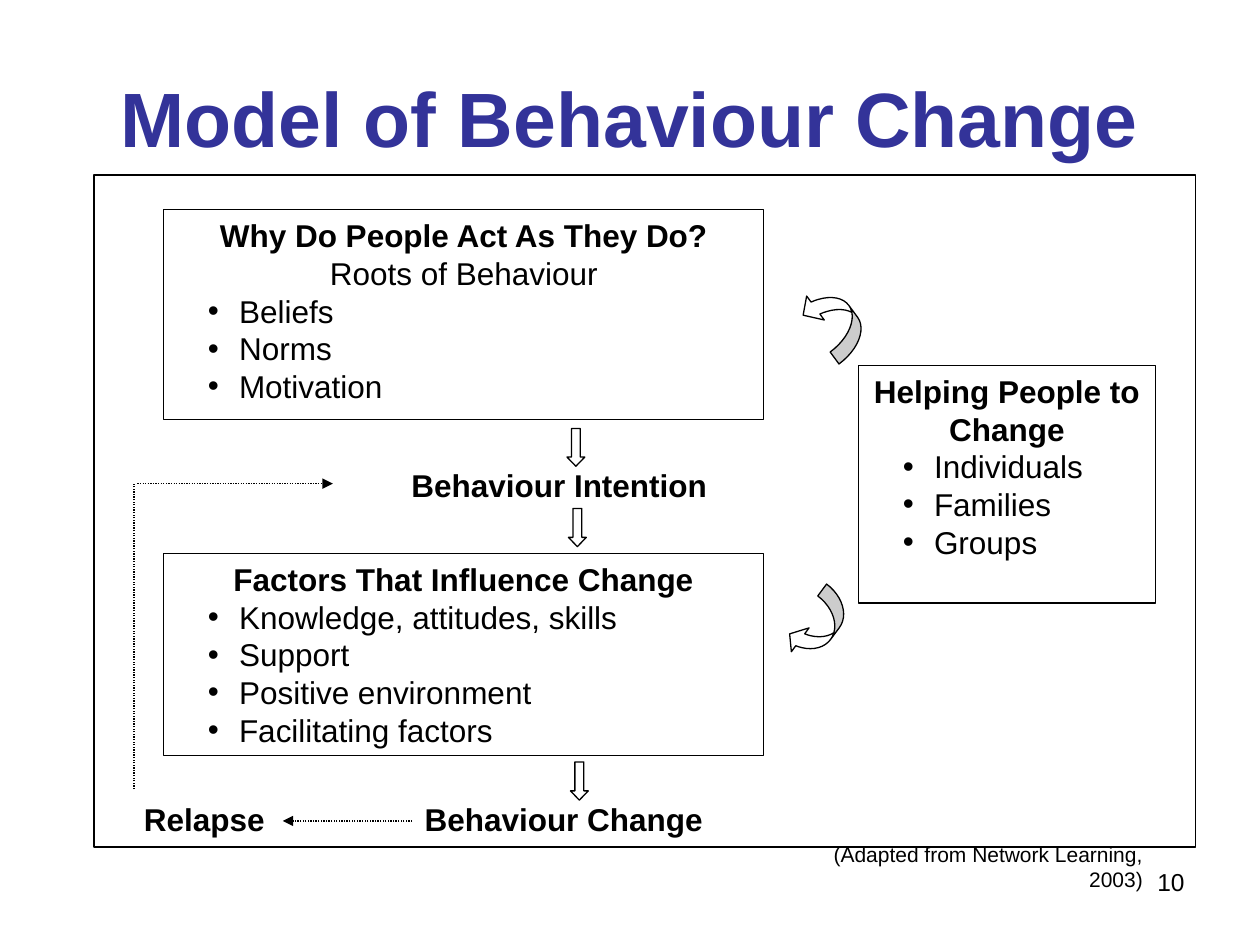
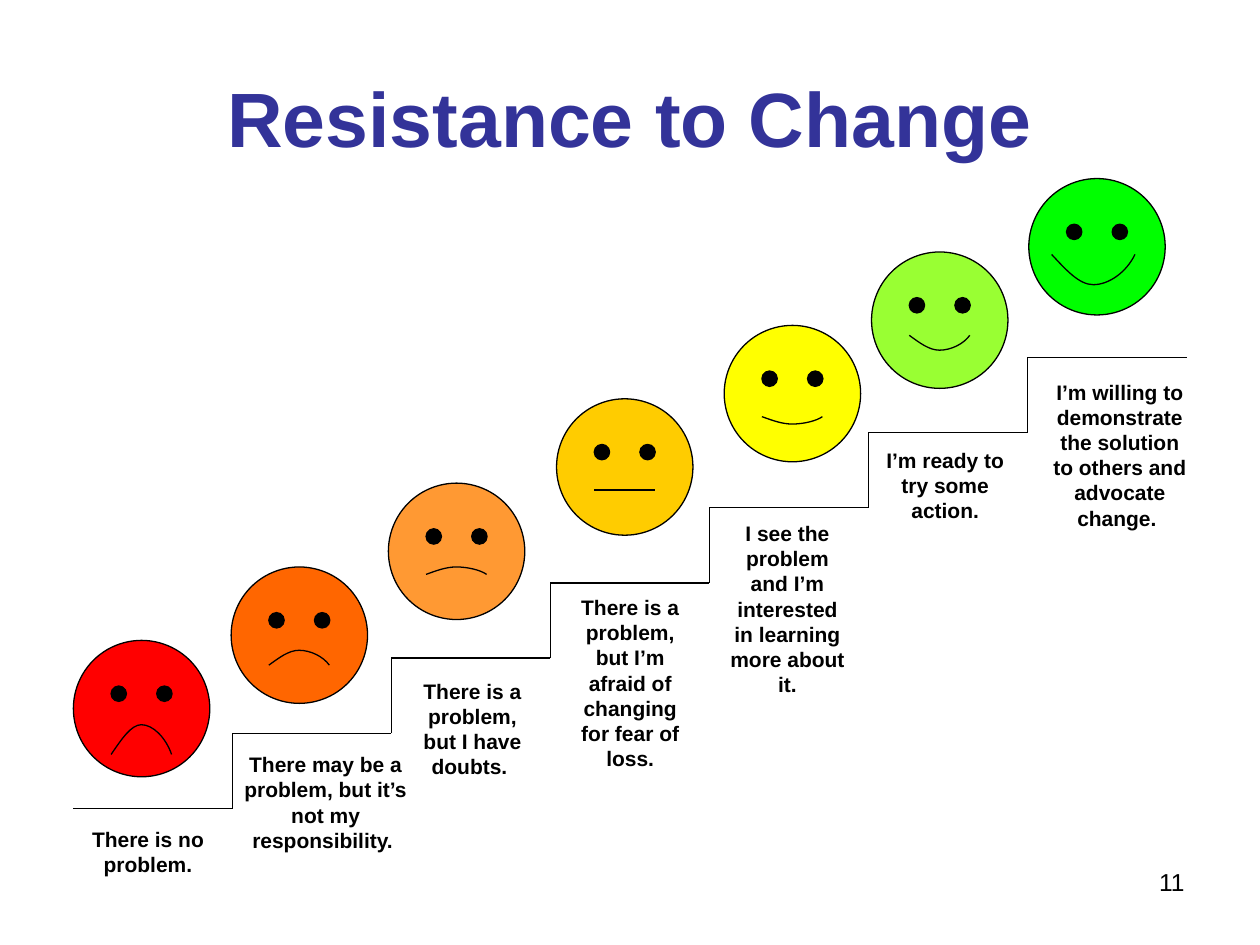
from lxml import etree
from pptx import Presentation
from pptx.dml.color import RGBColor
from pptx.enum.dml import MSO_LINE_DASH_STYLE as Dash
from pptx.enum.shapes import MSO_CONNECTOR as Connector, MSO_SHAPE as Shape
from pptx.enum.text import MSO_ANCHOR as Anchor, MSO_AUTO_SIZE as AutoSize, PP_ALIGN as Align
from pptx.oxml.ns import qn
from pptx.util import Cm, Pt

COLOURS = {"title": "333399", "ink": "000000", "paper": "FFFFFF"}
FACE_COLOURS = ["FF0000", "FF6600", "FF9933", "FFCC00", "FFFF00", "99FF33", "00FF00"]
TITLE = {"name": "Arial", "size": Pt(44), "bold": True}
HEADING = {"name": "Arial", "size": Pt(18), "bold": True}
BODY = {"name": "Arial", "size": Pt(18), "bold": False}
LABEL = {"name": "Arial", "size": Pt(12), "bold": True}
SOURCE = {"name": "Arial", "size": Pt(12), "bold": False}
NUMBER = {"name": "Arial", "size": Pt(14), "bold": False}


def add_box(slide, kind, box, fill=None, line=None, paragraphs=(), align=Align.CENTER):
    """Add a shape, or a text box if kind is None; paragraphs are (text, font format, bulleted)."""
    left, top, width, height = map(Cm, box)
    if kind is None:
        shape = slide.shapes.add_textbox(left, top, width, height)
    else:
        shape = slide.shapes.add_shape(kind, left, top, width, height)
        shape.shadow.inherit = False
        if fill:
            shape.fill.solid()
            shape.fill.fore_color.rgb = RGBColor.from_string(fill)
        else:
            shape.fill.background()
        if line:
            shape.line.color.rgb = RGBColor.from_string(COLOURS["ink"])
            shape.line.width = Pt(line)
        else:
            shape.line.fill.background()
    frame = shape.text_frame
    frame.word_wrap = True
    frame.vertical_anchor = Anchor.TOP
    for index, (text, font_format, bulleted) in enumerate(paragraphs):
        paragraph = frame.add_paragraph() if index else frame.paragraphs[0]
        paragraph.alignment = Align.LEFT if bulleted else align
        if bulleted:
            properties = paragraph._p.get_or_add_pPr()
            properties.set("marL", str(Cm(1.27)))
            properties.set("indent", str(-Cm(0.63)))
            etree.SubElement(properties, qn("a:buFont"), typeface="Arial")
            etree.SubElement(properties, qn("a:buChar"), char="•")
        run = paragraph.add_run()
        run.text = text
        for name, value in font_format.items():
            setattr(run.font, name, value)
        run.font.color.rgb = RGBColor.from_string(COLOURS["ink"])
    return shape


def add_line(slide, start, end, dotted=False, arrow=False):
    line = slide.shapes.add_connector(Connector.STRAIGHT, *map(Cm, start + end))
    line.line.color.rgb = RGBColor.from_string(COLOURS["ink"])
    line.line.width = Pt(0.75)
    if dotted:
        line.line.dash_style = Dash.ROUND_DOT
    if arrow:
        etree.SubElement(line.line._get_or_add_ln(), qn("a:tailEnd"), type="triangle")
    etree.SubElement(line._element.spPr, qn("a:effectLst"))


presentation = Presentation()
presentation.slide_width, presentation.slide_height = Cm(25.4), Cm(19.05)

# Titles and slide numbers
slides = []
for number, heading in [(10, "Model of Behaviour Change"), (11, "Resistance to Change")]:
    slide = presentation.slides.add_slide(presentation.slide_layouts[5])
    title = slide.shapes.title
    title.left, title.top, title.width, title.height = map(Cm, (1.27, 0.76, 22.86, 3.18))
    title.text = heading
    title.text_frame.auto_size = AutoSize.NONE
    title.text_frame.vertical_anchor = Anchor.MIDDLE
    paragraph = title.text_frame.paragraphs[0]
    paragraph.alignment = Align.CENTER
    font = paragraph.runs[0].font
    for name, value in TITLE.items():
        setattr(font, name, value)
    font.color.rgb = RGBColor.from_string(COLOURS["title"])
    add_box(slide, None, (18.21, 17.35, 5.92, 1.32),
            paragraphs=[(str(number), NUMBER, False)], align=Align.RIGHT)
    slides.append(slide)
model_slide, resistance_slide = slides

# Model: outer frame and boxes with bullets
add_box(model_slide, Shape.RECTANGLE, (1.9, 3.53, 22.2, 13.55), line=1)
model_boxes = [
    ((3.3, 4.23, 12.1, 4.23), "Why Do People Act As They Do?", ["Roots of Behaviour"],
     ["Beliefs", "Norms", "Motivation"]),
    ((3.3, 11.16, 12.09, 4.07), "Factors That Influence Change", [],
     ["Knowledge, attitudes, skills", "Support", "Positive environment", "Facilitating factors"]),
    ((17.31, 7.37, 5.98, 4.79), "Helping People to Change", [],
     ["Individuals", "Families", "Groups"]),
]
for box, heading, subheadings, bullets in model_boxes:
    paragraphs = [(heading, HEADING, False)]
    paragraphs += [(text, BODY, False) for text in subheadings]
    paragraphs += [(text, BODY, True) for text in bullets]
    add_box(model_slide, Shape.RECTANGLE, box, COLOURS["paper"], 0.75, paragraphs)

# Model: stages without a border
for text, box, align in [
    ("Relapse", (2.65, 16, 4.01, 0.91), Align.LEFT),
    ("Behaviour Intention", (7.16, 9.27, 8.23, 0.76), Align.CENTER),
    ("Behaviour Change", (8.31, 16, 6.25, 0.91), Align.LEFT),
]:
    add_box(model_slide, Shape.RECTANGLE, box, COLOURS["paper"],
            paragraphs=[(text, HEADING, False)], align=align)

# Model: block arrows
for kind, box, rotation, adjustments in [
    (Shape.DOWN_ARROW, (11.43, 8.64, 0.36, 0.76), 0, (0.5, 0.515)),
    (Shape.DOWN_ARROW, (11.46, 10.25, 0.36, 0.77), 0, (0.5, 0.515)),
    (Shape.DOWN_ARROW, (11.5, 15.36, 0.36, 0.77), 0, (0.5, 0.515)),
    (Shape.CURVED_LEFT_ARROW, (16.13, 11.84, 0.73, 1.55), 36.6, (0.41, 0.82, 0.333)),
    (Shape.CURVED_UP_ARROW, (16.05, 6.04, 1.52, 0.86), 233.7, (0.348, 0.697, 0.333)),
]:
    arrow = add_box(model_slide, kind, box, COLOURS["paper"], 0.75)
    arrow.rotation = rotation
    for index, value in enumerate(adjustments):
        arrow.adjustments[index] = value

# Model: dotted relapse loop and source
add_line(model_slide, (8.31, 16.55), (5.7, 16.55), dotted=True, arrow=True)
add_line(model_slide, (2.7, 15.91), (2.7, 9.75), dotted=True)
add_line(model_slide, (2.77, 9.75), (6.71, 9.75), dotted=True, arrow=True)
source = add_box(model_slide, None, (16.2, 17.09, 7.09, 0.76), align=Align.RIGHT,
                 paragraphs=[("(Adapted from Network Learning, 2003)", SOURCE, False)])
source.text_frame.vertical_anchor = Anchor.MIDDLE

# Resistance: faces as (left, top, mouth left, mouth width, mouth corner height, mouth middle height)
FACE_SIZE, EYE_SIZE = 2.75, 0.31
faces = [
    (1.48, 12.91, 0.76, 1.22, 2.3, 1.7),
    (4.66, 11.43, 0.76, 1.22, 1.98, 1.68),
    (7.83, 9.74, 0.76, 1.22, 1.84, 1.69),
    (11.22, 8.04, 0.76, 1.22, 1.84, 1.84),
    (14.6, 6.56, 0.76, 1.22, 1.84, 1.99),
    (17.57, 5.08, 0.76, 1.22, 1.68, 1.98),
    (20.74, 3.6, 0.46, 1.68, 1.53, 2.14),
]
# Bezier controls of both mouth halves: share of the width, share of the bend
MOUTH_HALVES = [[(0.17, 0.5), (0.33, 1), (0.5, 1)], [(0.69, 1), (0.9, 0.58), (1, 0)]]
for colour, (left, top, mouth_left, width, corner, middle) in zip(FACE_COLOURS, faces):
    add_box(resistance_slide, Shape.OVAL, (left, top, FACE_SIZE, FACE_SIZE), colour, 0.75)
    for eye_left in (0.76, 1.68):
        add_box(resistance_slide, Shape.OVAL, (left + eye_left, top + 0.92, EYE_SIZE, EYE_SIZE),
                COLOURS["ink"], 0.75)
    x, y, bend = left + mouth_left, top + corner, middle - corner
    if not bend:
        add_line(resistance_slide, (x, y), (x + width, y))
        continue
    builder = resistance_slide.shapes.build_freeform(Cm(x), Cm(y))
    builder.add_line_segments([(Cm(x + width / 2), Cm(y + bend)), (Cm(x + width), Cm(y))],
                              close=False)
    mouth = builder.convert_to_shape()
    mouth.shadow.inherit = False
    mouth.fill.background()
    mouth.line.color.rgb = RGBColor.from_string(COLOURS["ink"])
    mouth.line.width = Pt(0.75)
    # Turn the two straight segments into curves
    segments = list(mouth._element.iter(qn("a:lnTo")))
    for segment, controls in zip(segments, MOUTH_HALVES):
        curve = etree.Element(qn("a:cubicBezTo"))
        for across, share in controls:
            etree.SubElement(curve, qn("a:pt"), x=str(Cm(across * width)),
                             y=str(Cm(share * bend - min(bend, 0))))
        segment.getparent().replace(segment, curve)

# Resistance: staircase
TREAD, RISE = 22.44 / 7, 9.1 / 6
for index in range(len(faces)):
    x, y = 1.48 + index * TREAD, 16.3 - index * RISE
    add_line(resistance_slide, (x, y), (x + TREAD, y))
    if index:
        add_line(resistance_slide, (x, y + RISE), (x, y))

# Resistance: what each step says
for text, box in [
    ("There is no problem.", (1.5, 16.54, 2.97, 1.27)),
    ("There may be a problem, but it’s not my responsibility. ", (4.66, 15.03, 3.81, 2.29)),
    ("There is a problem, but I have doubts. ", (8.04, 13.55, 2.97, 2.29)),
    ("There is a problem, but I’m afraid of changing for fear of loss.",
     (11.22, 11.86, 2.97, 3.81)),
    ("I see the problem and I’m interested in learning more about it.",
     (14.39, 10.37, 2.97, 3.81)),
    ("I’m ready to try some action.", (17.57, 8.89, 2.97, 1.78)),
    ("I’m willing to demonstrate the solution to others and advocate change. ",
     (20.9, 7.52, 3.35, 3.3)),
]:
    add_box(resistance_slide, None, box, paragraphs=[(text, LABEL, False)])

presentation.save("out.pptx")
